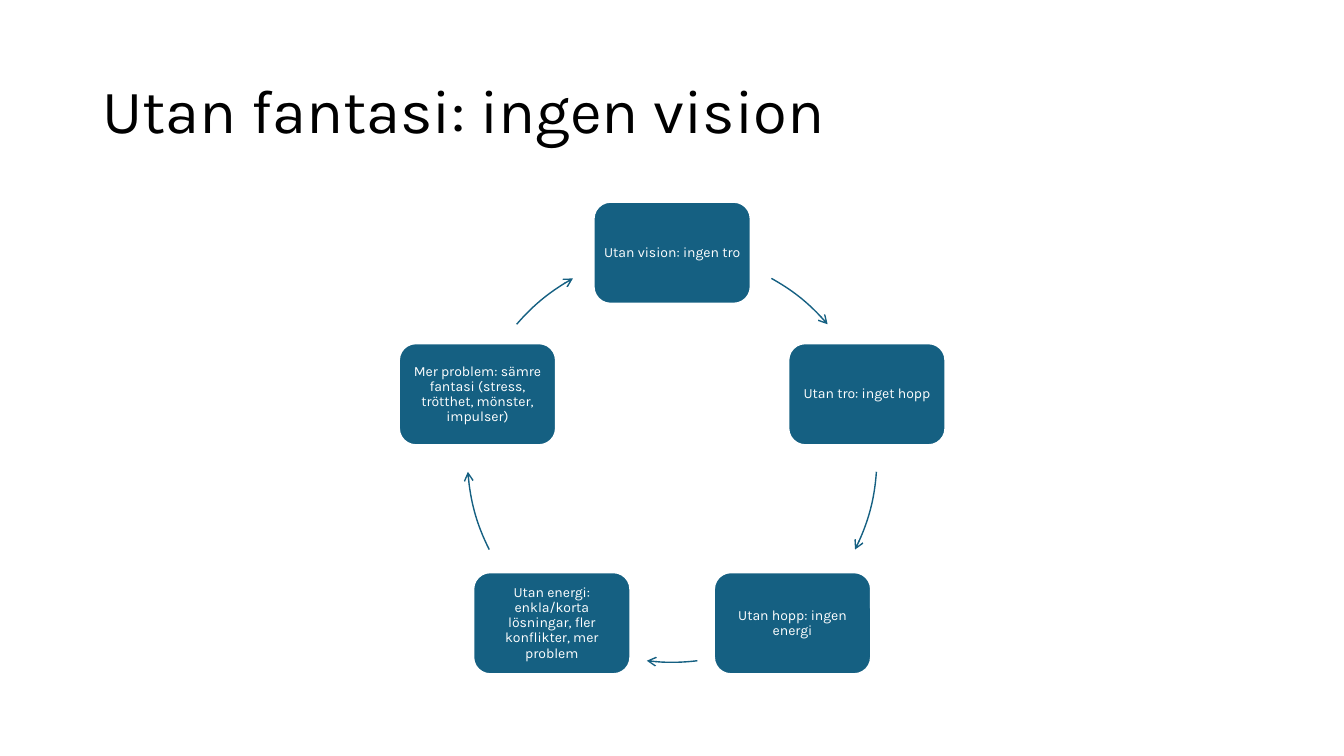
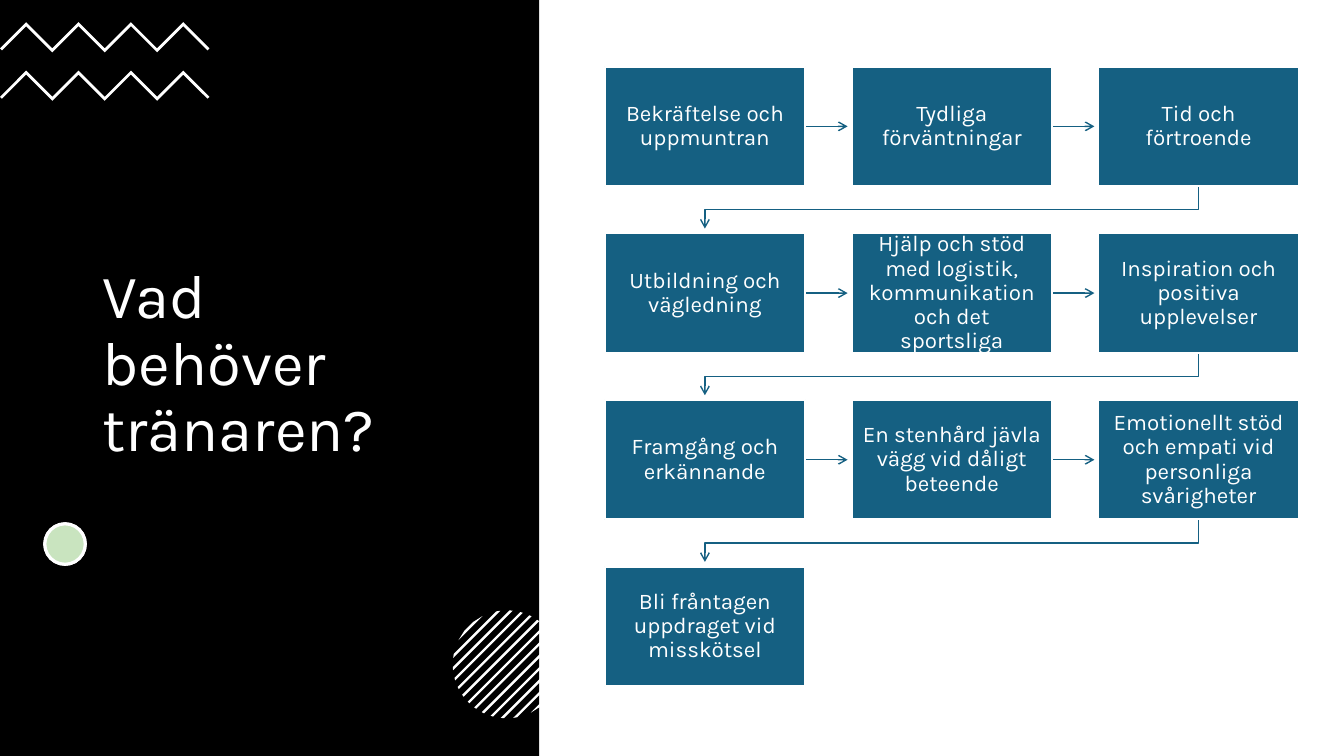
from collections import namedtuple
from math import cos, radians, sin, sqrt

from lxml import etree
from pptx import Presentation
from pptx.dml.color import RGBColor
from pptx.enum.shapes import MSO_CONNECTOR, MSO_SHAPE
from pptx.enum.text import MSO_ANCHOR, MSO_AUTO_SIZE, PP_ALIGN
from pptx.oxml.ns import qn
from pptx.util import Cm, Pt

BLACK = RGBColor(0x00, 0x00, 0x00)
WHITE = RGBColor(0xFF, 0xFF, 0xFF)
TEAL = RGBColor(0x15, 0x60, 0x82)
GREEN = RGBColor(0x4E, 0xA7, 0x2E)

FONT = "Karla"
TITLE_SIZE = 44
LINE_SPACING = 0.9
TITLE_ONLY = 5

RECT, ROUNDED = MSO_SHAPE.RECTANGLE, MSO_SHAPE.ROUNDED_RECTANGLE
OVAL, ARC = MSO_SHAPE.OVAL, MSO_SHAPE.ARC
STRAIGHT = MSO_CONNECTOR.STRAIGHT
LEFT, CENTER = PP_ALIGN.LEFT, PP_ALIGN.CENTER
MIDDLE = MSO_ANCHOR.MIDDLE
NO_AUTOFIT = MSO_AUTO_SIZE.NONE

# All boxes and points are in centimetres.
Box = namedtuple("Box", "left top width height")

CYCLE_TITLE = "Utan fantasi: ingen vision"
CYCLE_STEPS = [
    "Utan vision: ingen tro",
    "Utan tro: inget hopp",
    "Utan hopp: ingen energi",
    "Utan energi: enkla/korta lösningar, fler konflikter, mer problem",
    "Mer problem: sämre fantasi (stress, trötthet, mönster, impulser)",
]
# Start and end of each arrow, in degrees clockwise from the top of the ring.
CYCLE_ARROWS = [(29, 49.4), (94, 116.7), (172.9, 187.1), (243.3, 266), (310.6, 331)]

NEEDS_TITLE = "Vad behöver tränaren?"
NEEDS = [
    "Bekräftelse och uppmuntran",
    "Tydliga förväntningar",
    "Tid och förtroende",
    "Utbildning och vägledning",
    "Hjälp och stöd med logistik, kommunikation och det sportsliga",
    "Inspiration och positiva upplevelser",
    "Framgång och erkännande",
    "En stenhård jävla vägg vid dåligt beteende",
    "Emotionellt stöd och empati vid personliga svårigheter",
    "Bli fråntagen uppdraget vid misskötsel",
]


def write(frame, text, size, color, align):
    frame.word_wrap = True
    frame.auto_size = NO_AUTOFIT
    frame.vertical_anchor = MIDDLE
    paragraph = frame.paragraphs[0]
    paragraph.alignment = align
    paragraph.line_spacing = LINE_SPACING
    run = paragraph.add_run()
    run.text = text
    run.font.name = FONT
    run.font.size = Pt(size)
    run.font.color.rgb = color


def add_titled_slide(prs, text, box, color):
    slide = prs.slides.add_slide(prs.slide_layouts[TITLE_ONLY])
    title = slide.shapes.title
    title.left, title.top, title.width, title.height = map(Cm, box)
    write(title.text_frame, text, TITLE_SIZE, color, LEFT)
    return slide


def paint(shape, fill, line=None, line_width=1.5):
    shape.shadow.inherit = False
    if fill is None:
        shape.fill.background()
    else:
        shape.fill.solid()
        shape.fill.fore_color.rgb = fill
    if line is None:
        shape.line.fill.background()
    else:
        shape.line.color.rgb = line
        shape.line.width = Pt(line_width)


def add_filled(shapes, kind, box, fill, line=None, line_width=1.5):
    shape = shapes.add_shape(kind, *map(Cm, box))
    paint(shape, fill, line, line_width)
    return shape


def add_label_box(shapes, kind, box, text, size, margin):
    shape = add_filled(shapes, kind, box, TEAL, WHITE)
    frame = shape.text_frame
    frame.margin_left = frame.margin_right = Cm(margin)
    frame.margin_top = frame.margin_bottom = Cm(margin)
    write(frame, text, size, WHITE, CENTER)


def add_outline(shapes, points, close=True):
    corners = [(Cm(x), Cm(y)) for x, y in points]
    builder = shapes.build_freeform(*corners[0])
    builder.add_line_segments(corners[1:], close=close)
    return builder.convert_to_shape()


def add_arrowhead(line_shape):
    line = line_shape.element.spPr.find(qn("a:ln"))
    etree.SubElement(line, qn("a:tailEnd"), type="arrow")


def add_straight_arrow(shapes, start, end):
    arrow = shapes.add_connector(STRAIGHT, *map(Cm, start + end))
    arrow.line.color.rgb = TEAL
    arrow.line.width = Pt(1)
    add_arrowhead(arrow)
    etree.SubElement(arrow.element.spPr, qn("a:effectLst"))


def add_cycle(shapes, ring):
    """Place the steps evenly on the ring, clockwise from the top."""
    width, height = 3.96, 2.57
    radius = ring.width / 2
    center_x, center_y = ring.left + radius, ring.top + radius
    for index, (text, span) in enumerate(zip(CYCLE_STEPS, CYCLE_ARROWS)):
        angle = radians(360 / len(CYCLE_STEPS) * index)
        step = Box(center_x + radius * sin(angle) - width / 2,
                   center_y - radius * cos(angle) - height / 2, width, height)
        add_label_box(shapes, ROUNDED, step, text, 10, 0.08)

        arrow = add_filled(shapes, ARC, ring, None, TEAL, 1)
        for end, degrees in enumerate(span):
            # Arc angles run from three o'clock in 60000ths of a degree.
            arrow.adjustments[end] = (degrees - 90) % 360 * 0.6
        add_arrowhead(arrow)


def add_zigzag(shapes, left, top):
    pitch, rise, thickness = 0.66, 0.66, 0.1
    count = 9
    upper = [(left + i * pitch, top + (0 if i % 2 else rise)) for i in range(count)]
    inset = thickness / 2
    lower = [(x, y + thickness) for x, y in upper[1:-1]]
    first = (upper[0][0] + inset, upper[0][1] + inset)
    last = (upper[-1][0] - inset, upper[-1][1] + inset)
    paint(add_outline(shapes, upper + [last] + lower[::-1] + [first]), WHITE)


def add_striped_disc(shapes, disc):
    """Fill a circle with parallel diagonal stripes."""
    pitch, half_stripe = 0.22, 0.03
    radius = disc.width / 2
    center_x, center_y = disc.left + radius, disc.top + radius

    def chord(distance):
        half = sqrt(radius ** 2 - distance ** 2)
        return [(center_x + (distance + side) / sqrt(2),
                 center_y + (distance - side) / sqrt(2)) for side in (half, -half)]

    for index in range(-6, 7):
        near = chord(index * pitch - half_stripe)
        far = chord(index * pitch + half_stripe)
        paint(add_outline(shapes, near + far[::-1]), WHITE)


def add_side_panel(slide, panel):
    shapes = slide.shapes
    background = add_filled(shapes, RECT, panel, BLACK)
    shapes.title.element.addprevious(background.element)

    zigzags = shapes.add_group_shape().shapes
    for top in (0.56, 1.78):
        add_zigzag(zigzags, panel.left, panel.top + top)

    dot = Box(panel.left + 1.13, panel.top + 13.2, 1.02, 1.02)
    add_filled(shapes, OVAL, dot, WHITE, WHITE, 2.25)
    tint = add_filled(shapes, OVAL, dot, GREEN, WHITE, 2.25)
    color = tint.element.spPr.find(qn("a:solidFill")).find(qn("a:srgbClr"))
    etree.SubElement(color, qn("a:alpha"), val="30000")

    disc = Box(panel.left + 11.41, panel.top + 15.38, 2.72, 2.72)
    add_striped_disc(shapes.add_group_shape().shapes, disc)


def add_needs_flow(shapes, area):
    """Lay the needs out row by row, each with an arrow to the next."""
    columns, rows = 3, 4
    width, height = 5.05, 3.01
    pitch_x = (area.width - width) / (columns - 1)
    pitch_y = (area.height - height) / (rows - 1)
    arrow_length = 1.07
    for index, text in enumerate(NEEDS):
        row, column = divmod(index, columns)
        left, top = area.left + column * pitch_x, area.top + row * pitch_y
        if index < len(NEEDS) - 1:
            if column < columns - 1:
                right, middle = left + width, top + height / 2
                add_straight_arrow(shapes, (right, middle), (right + arrow_length, middle))
            else:
                start_x, end_x = left + width / 2, area.left + width / 2
                bottom = top + height
                turn = bottom + (pitch_y - height) / 2
                bend = add_outline(shapes, [(start_x, bottom), (start_x, turn), (end_x, turn),
                                            (end_x, bottom + arrow_length)], close=False)
                paint(bend, None, TEAL, 1)
                add_arrowhead(bend)
        add_label_box(shapes, RECT, Box(left, top, width, height), text, 16, 0.22)


def main():
    prs = Presentation()
    prs.slide_width, prs.slide_height = Cm(33.87), Cm(19.05)

    cycle = add_titled_slide(prs, CYCLE_TITLE, Box(2.33, 1.01, 29.21, 3.68), BLACK)
    add_cycle(cycle.shapes, Box(11.78, 6.37, 10.32, 10.32))

    needs = add_titled_slide(prs, NEEDS_TITLE, Box(2.33, 3.33, 8.89, 11.76), WHITE)
    add_side_panel(needs, Box(0, 0, 13.59, 19.05))
    add_needs_flow(needs.shapes, Box(15.24, 1.68, 17.49, 15.61))

    prs.save("out.pptx")


if __name__ == "__main__":
    main()
